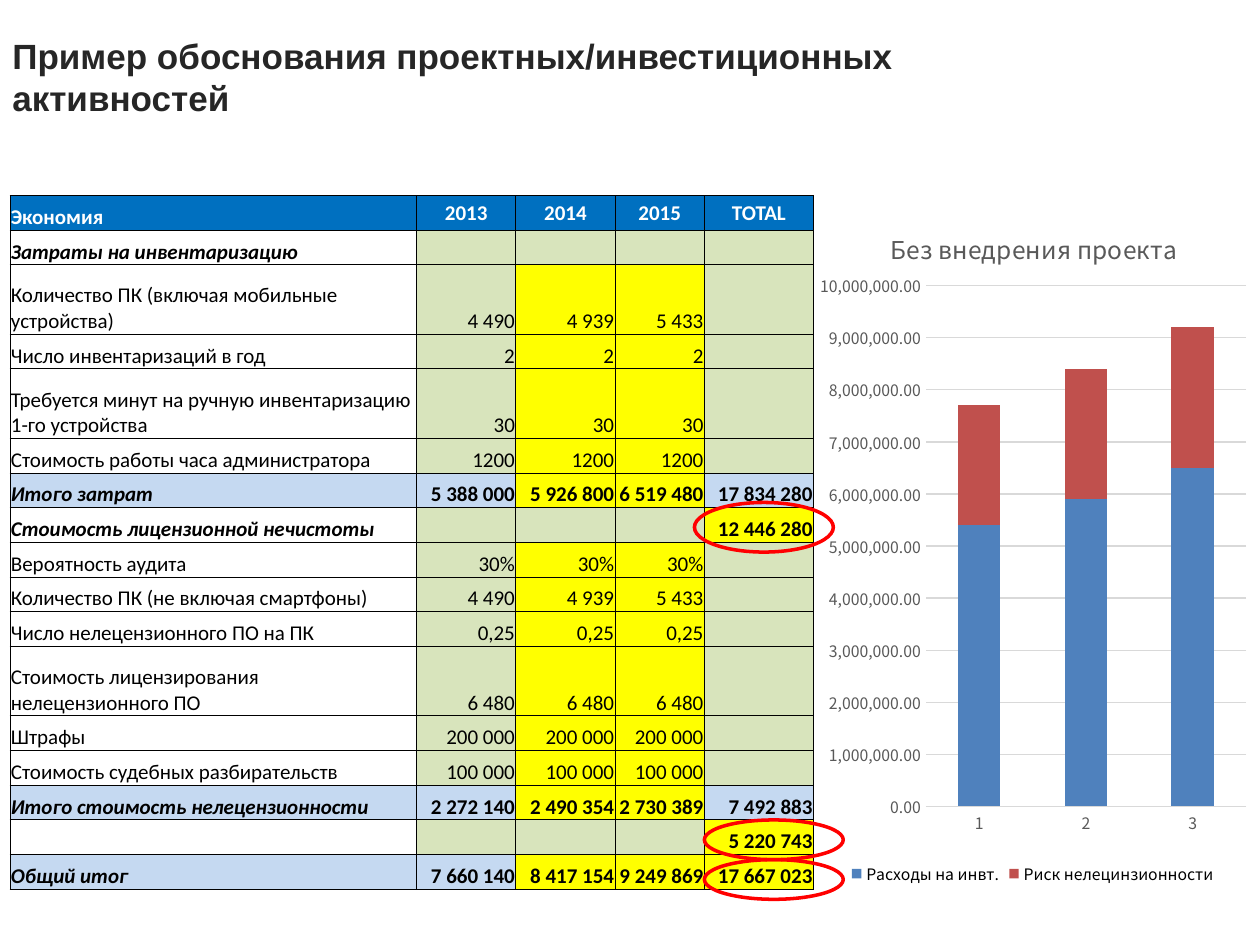
from lxml.etree import SubElement
from pptx import Presentation
from pptx.chart.data import CategoryChartData
from pptx.dml.color import RGBColor
from pptx.enum.chart import XL_CHART_TYPE, XL_LEGEND_POSITION, XL_TICK_MARK
from pptx.enum.shapes import MSO_SHAPE
from pptx.enum.text import MSO_ANCHOR, PP_ALIGN
from pptx.oxml import parse_xml
from pptx.oxml.ns import nsdecls, qn
from pptx.util import Cm, Pt

BLACK = RGBColor(0x00, 0x00, 0x00)
WHITE = RGBColor(0xFF, 0xFF, 0xFF)
DARK_GREY = RGBColor(0x26, 0x26, 0x26)
MID_GREY = RGBColor(0x59, 0x59, 0x59)
LIGHT_GREY = RGBColor(0xD9, 0xD9, 0xD9)
HEADER_BLUE = RGBColor(0x00, 0x70, 0xC0)
TOTAL_BLUE = RGBColor(0xC5, 0xD9, 0xF1)
GREEN = RGBColor(0xD8, 0xE4, 0xBC)
YELLOW = RGBColor(0xFF, 0xFF, 0x00)
RED = RGBColor(0xFF, 0x00, 0x00)
SERIES_BLUE = RGBColor(0x4F, 0x81, 0xBD)
SERIES_RED = RGBColor(0xC0, 0x50, 0x4D)

TABLE_FONT = "Calibri"
CHART_FONT = "Noto Sans CJK KR"
COLUMN_WIDTHS = (8.2, 2, 2, 1.8, 2.2)
ROW_HEIGHT = 0.7
TALL_ROW_HEIGHT = 1.4
TALL_ROWS = (2, 4, 11)

ROWS = [
    ("head", "Экономия", "2013", "2014", "2015", "TOTAL"),
    ("section", "Затраты на инвентаризацию", "", "", "", ""),
    ("plain", "Количество ПК (включая мобильные устройства)", "4 490", "4 939", "5 433", ""),
    ("plain", "Число инвентаризаций в год", "2", "2", "2", ""),
    ("plain", "Требуется минут на ручную инвентаризацию 1-го устройства", "30", "30", "30", ""),
    ("plain", "Стоимость работы часа администратора", "1200", "1200", "1200", ""),
    ("total", "Итого затрат", "5 388 000", "5 926 800", "6 519 480", "17 834 280"),
    ("section", "Стоимость лицензионной нечистоты", "", "", "", "12 446 280"),
    ("plain", "Вероятность аудита", "30%", "30%", "30%", ""),
    ("plain", "Количество ПК (не включая смартфоны)", "4 490", "4 939", "5 433", ""),
    ("plain", "Число нелецензионного ПО на ПК", "0,25", "0,25", "0,25", ""),
    ("plain", "Стоимость лицензирования нелецензионного ПО", "6 480", "6 480", "6 480", ""),
    ("plain", "Штрафы", "200 000", "200 000", "200 000", ""),
    ("plain", "Стоимость судебных разбирательств", "100 000", "100 000", "100 000", ""),
    ("total", "Итого стоимость нелецензионности", "2 272 140", "2 490 354", "2 730 389", "7 492 883"),
    ("section", "", "", "", "", "5 220 743"),
    ("grand", "Общий итог", "7 660 140", "8 417 154", "9 249 869", "17 667 023"),
]


def add_title(page, text):
    box = page.shapes.add_textbox(Cm(0), Cm(0.05), Cm(25.4), Cm(2.97))
    frame = box.text_frame
    frame.word_wrap = True
    frame.vertical_anchor = MSO_ANCHOR.MIDDLE
    frame.text = text
    font = frame.paragraphs[0].runs[0].font
    for span in frame.paragraphs[0].runs:
        font = span.font
        font.name, font.size, font.bold = "Arial", Pt(20), True
        font.color.rgb = DARK_GREY


def cell_colour(kind, column, text):
    if kind == "head":
        return HEADER_BLUE
    row_colour = TOTAL_BLUE if kind in ("total", "grand") else None
    if column == 0:
        return row_colour
    if not text:
        return GREEN
    if column == 1:
        return row_colour or GREEN
    if column == 4 and kind == "total":
        return TOTAL_BLUE
    return YELLOW


def add_borders(cell):
    properties = cell._tc.get_or_add_tcPr()
    for side in ("lnL", "lnR", "lnT", "lnB"):
        properties.append(parse_xml(
            f'<a:{side} {nsdecls("a")} w="{Pt(0.5)}"><a:solidFill>'
            f'<a:srgbClr val="{BLACK}"/></a:solidFill></a:{side}>'))


def fill_cell(cell, kind, column, text):
    cell.margin_left = cell.margin_right = cell.margin_top = Cm(0.02)
    cell.margin_bottom = 0
    header_year = kind == "head" and column > 0
    cell.vertical_anchor = MSO_ANCHOR.MIDDLE if header_year else MSO_ANCHOR.BOTTOM
    add_borders(cell)
    colour = cell_colour(kind, column, text)
    if colour is None:
        cell.fill.background()
    else:
        cell.fill.solid()
        cell.fill.fore_color.rgb = colour
    paragraph = cell.text_frame.paragraphs[0]
    if not text:
        paragraph._p.get_or_add_endParaRPr().set("sz", "1200")
        return
    paragraph.text = text
    if column:
        paragraph.alignment = PP_ALIGN.CENTER if header_year else PP_ALIGN.RIGHT
    font = paragraph.runs[0].font
    font.name, font.size = TABLE_FONT, Pt(12)
    font.bold = kind != "plain"
    font.italic = column == 0 and kind not in ("head", "plain")
    font.color.rgb = WHITE if kind == "head" else BLACK


def add_cost_table(page):
    frame = page.shapes.add_table(len(ROWS), len(COLUMN_WIDTHS), Cm(0.2), Cm(3.94), Cm(16.2), Cm(14))
    table = frame.table
    table.first_row = table.horz_banding = False
    for column, width in zip(table.columns, COLUMN_WIDTHS):
        column.width = Cm(width)
    for row_index, (kind, *texts) in enumerate(ROWS):
        height = TALL_ROW_HEIGHT if row_index in TALL_ROWS else ROW_HEIGHT
        table.rows[row_index].height = Cm(height)
        for column, text in enumerate(texts):
            fill_cell(table.cell(row_index, column), kind, column, text)


def style_font(font, size, colour):
    font.name, font.size, font.bold = CHART_FONT, Pt(size), False
    font.color.rgb = colour


def place_chart_part(element, index, **values):
    for layout in element.findall(qn("c:layout")):
        element.remove(layout)
    layout = parse_xml(f'<c:layout {nsdecls("c")}><c:manualLayout/></c:layout>')
    settings = {"xMode": "edge", "yMode": "edge", **values}
    for name, value in settings.items():
        SubElement(layout[0], qn(f"c:{name}")).set("val", str(value))
    element.insert(index, layout)


def add_cost_chart(page):
    data = CategoryChartData(number_format="#,##0.00")
    data.categories = ["1", "2", "3"]
    data.add_series("Расходы на инвт.", (5400000, 5900000, 6500000))
    data.add_series("Риск нелецинзионности", (2300000, 2500000, 2700000))
    chart = page.shapes.add_chart(
        XL_CHART_TYPE.COLUMN_STACKED, Cm(16.33), Cm(3.94), Cm(8.97), Cm(14), data).chart
    style_font(chart.font, 10, BLACK)

    chart.has_title = True
    title = chart.chart_title
    title.text_frame.text = "Без внедрения проекта"
    style_font(title.text_frame.paragraphs[0].runs[0].font, 14, MID_GREY)
    place_chart_part(title._element, 1, x=0.17, y=0.04)

    chart.has_legend = True
    chart.legend.position = XL_LEGEND_POSITION.BOTTOM
    chart.legend.include_in_layout = False
    style_font(chart.legend.font, 9, BLACK)

    plot = chart.plots[0]
    plot.gap_width, plot.overlap, plot.vary_by_categories = 150, 100, False
    for series, colour in zip(plot.series, (SERIES_BLUE, SERIES_RED)):
        series.format.fill.solid()
        series.format.fill.fore_color.rgb = colour

    values = chart.value_axis
    values.minimum_scale, values.maximum_scale, values.major_unit = 0, 10000000, 1000000
    values.tick_labels.number_format = "#,##0.00"
    values.tick_labels.number_format_is_linked = False
    values.format.line.fill.background()
    for axis in (chart.category_axis, values):
        axis.major_tick_mark = axis.minor_tick_mark = XL_TICK_MARK.NONE
        style_font(axis.tick_labels.font, 9, MID_GREY)
    for line in (chart.category_axis.format.line, values.major_gridlines.format.line):
        line.width = Pt(0.75)
        line.color.rgb = LIGHT_GREY
    plot_area = chart._chartSpace.find(f'.//{qn("c:plotArea")}')
    place_chart_part(plot_area, 0, layoutTarget="inner", x=0.26, y=0.13, w=0.72, h=0.75)
    target = plot_area[0][0].find(qn("c:layoutTarget"))
    plot_area[0][0].insert(0, target)


def add_highlight(page, left, top, height):
    oval = page.shapes.add_shape(MSO_SHAPE.OVAL, Cm(left), Cm(top), Cm(2.8), Cm(height))
    oval.shadow.inherit = False
    oval.fill.background()
    oval.line.color.rgb = RED
    oval.line.width = Pt(2)


def main():
    deck = Presentation()
    deck.slide_width, deck.slide_height = Cm(25.4), Cm(19.05)
    page = deck.slides.add_slide(deck.slide_layouts[6])
    add_title(page, "Пример обоснования проектных/инвестиционных \vактивностей")
    add_cost_table(page)
    add_cost_chart(page)
    for left, top, height in ((14, 10.13, 1), (14.2, 16.53, 0.8), (14.2, 17.33, 0.8)):
        add_highlight(page, left, top, height)
    deck.save("out.pptx")


if __name__ == "__main__":
    main()
